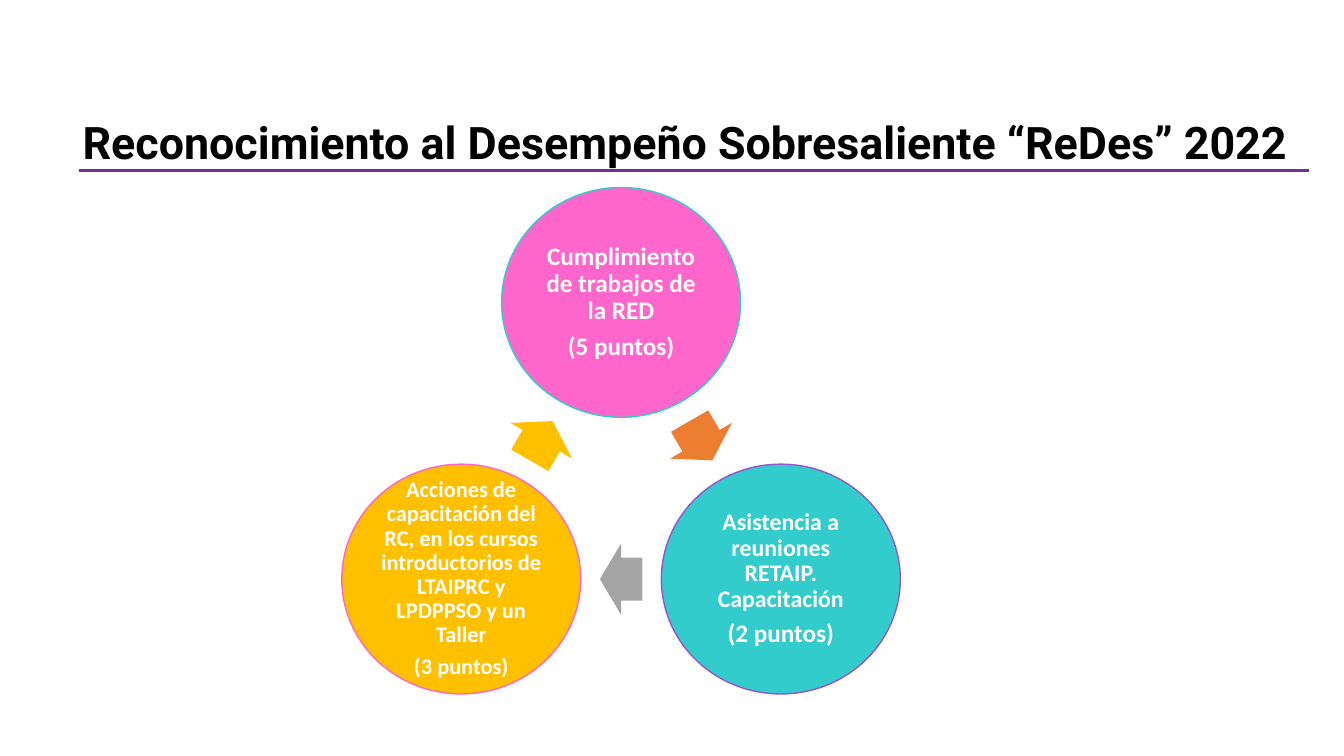
import math

import pptx
import pptx.dml.color
import pptx.enum.shapes
import pptx.enum.text
import pptx.oxml.ns
import pptx.util
from lxml import etree

RGBColor = pptx.dml.color.RGBColor
Inches = pptx.util.Inches
Pt = pptx.util.Pt
Align = pptx.enum.text.PP_ALIGN
Anchor = pptx.enum.text.MSO_ANCHOR
Shape = pptx.enum.shapes.MSO_SHAPE

BLACK = RGBColor(0x00, 0x00, 0x00)
WHITE = RGBColor(0xFF, 0xFF, 0xFF)
PURPLE = RGBColor(0x70, 0x30, 0xA0)
VIOLET = RGBColor(0x99, 0x54, 0xCC)
PINK = RGBColor(0xFF, 0x66, 0xCC)
TEAL = RGBColor(0x33, 0xCC, 0xCC)
ORANGE = RGBColor(0xED, 0x7D, 0x31)
GRAY = RGBColor(0xA5, 0xA5, 0xA5)
GOLD = RGBColor(0xFF, 0xC0, 0x00)

TITLE = "Reconocimiento al Desempeño Sobresaliente “ReDes” 2022"
CRITERIA = [
    ([("Cumplimiento de trabajos de la RED", 18), ("(5 puntos)", 18)],
     PINK, TEAL, 0.03),
    ([("Asistencia a reuniones RETAIP. Capacitación", 17), ("(2 puntos)", 18)],
     TEAL, VIOLET, 0.02),
    ([("Acciones de capacitación del RC, en los cursos introductorios de "
       "LTAIPRC y LPDPPSO y un Taller", 16), ("(3 puntos)", 16)],
     GOLD, PINK, 0.02),
]
ARROWS = [(ORANGE, 0.45), (GRAY, 0.42), (GOLD, 0.45)]

CENTER_X, CENTER_Y, RADIUS = 6.16, 4.83, 1.83
CIRCLE_WIDTH, CIRCLE_HEIGHT = 2.37, 2.28
ARROW_HEIGHT = 0.71
TURN = 360 / len(CRITERIA)


def ring_point(angle, radius):
    turn = math.radians(angle)
    return CENTER_X + radius * math.cos(turn), CENTER_Y + radius * math.sin(turn)


def add_centered(page, kind, center, width, height, color):
    x, y = center
    shape = page.shapes.add_shape(kind, Inches(x - width / 2), Inches(y - height / 2),
                                  Inches(width), Inches(height))
    shape.shadow.inherit = False
    shape.fill.solid()
    shape.fill.fore_color.rgb = color
    return shape


def write(frame, lines, font_name, color, margin=None):
    frame.word_wrap = True
    if margin is not None:
        frame.margin_left = frame.margin_right = Inches(margin)
        frame.margin_top = frame.margin_bottom = Inches(margin)
    for index, (text, size) in enumerate(lines):
        para = frame.add_paragraph() if index else frame.paragraphs[0]
        para.text = text
        para.alignment = Align.CENTER
        para.line_spacing = 0.9
        if index < len(lines) - 1:
            para.space_after = Pt(round(0.35 * size, 1))
        para.font.name = font_name
        para.font.size = Pt(size)
        para.font.bold = True
        para.font.color.rgb = color


def add_title(page):
    rule = page.shapes.add_connector(pptx.enum.shapes.MSO_CONNECTOR.STRAIGHT,
                                     Inches(0.78), Inches(1.69),
                                     Inches(12.98), Inches(1.69))
    rule.line.color.rgb = PURPLE
    rule.line.width = Pt(2.25)
    etree.SubElement(rule._element.spPr, pptx.oxml.ns.qn("a:effectLst"))
    box = page.shapes.add_textbox(Inches(0.45), Inches(1.15), Inches(12.7), Inches(0.65))
    write(box.text_frame, [(TITLE, 32)], "Roboto", BLACK)


def add_cycle(page):
    for index, (lines, fill, outline, margin) in enumerate(CRITERIA):
        angle = index * TURN - 90
        circle = add_centered(page, Shape.OVAL, ring_point(angle, RADIUS),
                              CIRCLE_WIDTH, CIRCLE_HEIGHT, fill)
        circle.line.color.rgb = outline
        circle.line.width = Pt(1)
        circle.text_frame.vertical_anchor = Anchor.MIDDLE
        write(circle.text_frame, lines, "Calibri", WHITE, margin)

        color, length = ARROWS[index]
        middle = ring_point(angle + TURN / 2, RADIUS * math.cos(math.radians(TURN / 2)))
        arrow = add_centered(page, Shape.RIGHT_ARROW, middle, length, ARROW_HEIGHT, color)
        arrow.line.fill.background()
        arrow.adjustments[0] = 0.6
        arrow.adjustments[1] = 0.5
        arrow.rotation = angle + 150


def main():
    deck = pptx.Presentation()
    deck.slide_width = Inches(13.33)
    deck.slide_height = Inches(7.5)
    page = deck.slides.add_slide(deck.slide_layouts[6])
    add_title(page)
    add_cycle(page)
    deck.save("out.pptx")


if __name__ == "__main__":
    main()
